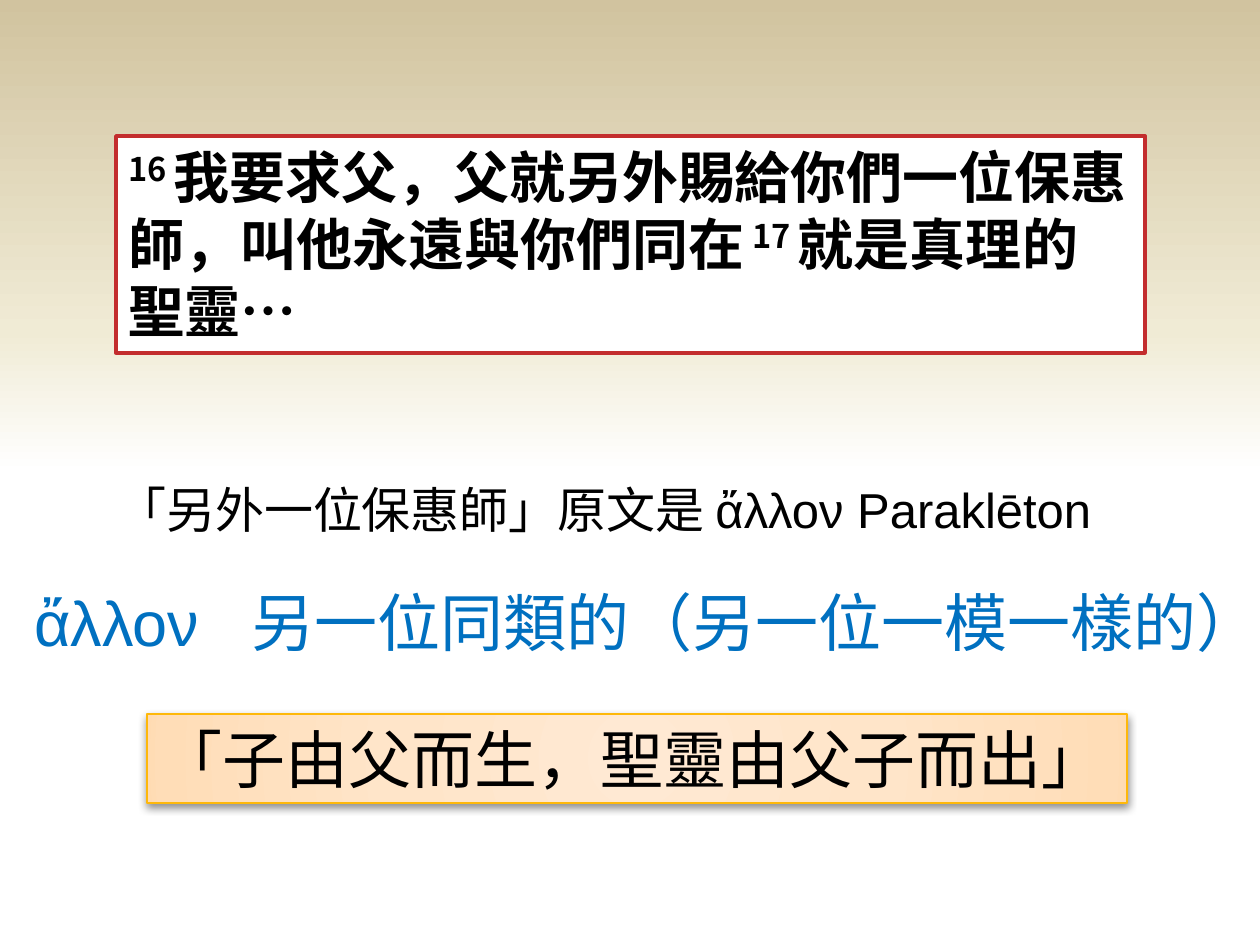
from pptx import Presentation
from pptx.dml.color import RGBColor
from pptx.enum.shapes import MSO_SHAPE as Preset
from pptx.enum.text import MSO_ANCHOR as Anchor, PP_ALIGN as Align
from pptx.oxml import parse_xml
from pptx.oxml.ns import nsdecls, qn
from pptx.util import Emu, Pt

COLORS = {"black": "000000", "white": "FFFFFF", "red": "C32D2E", "blue": "0070C0", "gold": "FEB80A"}
BACKDROP = [(50, "FFFFFF"), (50, "FFFFFF"), (65, "F0EBD5"), (100, "D1C39F")]
PEACH = [(0, "FFE9D3"), (50, "FFE5C9"), (97, "FFDDB7"), (100, "FFDBB2")]
LINEAR = '<a:lin ang="16200000" scaled="0"/>'
RADIAL = '<a:path path="circle"><a:fillToRect l="50000" t="50000" r="50000" b="50000"/></a:path>'

VERSE = [
    ("16\u00a0", 30),
    ("我要求父，父就另外賜給你們一位保惠師，叫他永遠與你們同在", 0),
    ("\u00a017\u00a0", 30),
    ("就是真理的聖靈…", 0),
]
ORIGINAL_WORDS = [("「另外一位保惠師」原文是 ἄλλον Paraklēton", 0)]
MEANING = [("ἄλλον   另一位同類的（另一位一模一樣的）", 0)]
CREED = [("「子由父而生，聖靈由父子而出」", 0)]


def px(length):
    return Emu(round(length * 914400 / 126))


def set_gradient(fill, element, stops, direction):
    fill.gradient()
    default = element.find(".//" + qn("a:gradFill"))
    marks = "".join(
        f'<a:gs pos="{pos * 1000}"><a:srgbClr val="{color}"/></a:gs>' for pos, color in stops
    )
    default.getparent().replace(default, parse_xml(
        f'<a:gradFill {nsdecls("a")} rotWithShape="1"><a:gsLst>{marks}</a:gsLst>{direction}</a:gradFill>'
    ))


def add_shadow(shape):
    shape._element.spPr.find(qn("a:effectLst")).append(parse_xml(
        f'<a:outerShdw {nsdecls("a")} blurRad="{Pt(5)}" dist="{Pt(2)}" dir="5400000" rotWithShape="0">'
        f'<a:srgbClr val="{COLORS["black"]}"><a:alpha val="43000"/></a:srgbClr></a:outerShdw>'
    ))


def write(shape, runs, size, font="Arial", color="black", bold=False, anchor=Anchor.TOP):
    frame = shape.text_frame
    frame.word_wrap = True
    frame.vertical_anchor = anchor
    paragraph = frame.paragraphs[0]
    paragraph.alignment = Align.LEFT
    for text, raised in runs:
        run = paragraph.add_run()
        run.text = text
        run.font.size = Pt(size)
        run.font.name = font
        run.font.bold = bold
        run.font.color.rgb = RGBColor.from_string(COLORS[color])
        properties = run.font._element
        if raised:
            properties.set("baseline", str(raised * 1000))
        if font != "Arial":
            properties.find(qn("a:latin")).addnext(
                parse_xml(f'<a:ea {nsdecls("a")} typeface="{font}"/>')
            )


def add_box(slide, place, line, width):
    box = slide.shapes.add_shape(Preset.RECTANGLE, *map(px, place))
    box.shadow.inherit = False
    box.line.color.rgb = RGBColor.from_string(COLORS[line])
    box.line.width = Pt(width)
    return box


def main():
    """Build the slide on the Greek word for another Paraclete."""
    deck = Presentation()
    deck.slide_width, deck.slide_height = px(1260), px(945)
    slide = deck.slides.add_slide(deck.slide_layouts[6])
    set_gradient(slide.background.fill, slide.element, BACKDROP, LINEAR)

    verse = add_box(slide, (116, 136, 1029, 217), "red", 2)
    verse.fill.solid()
    verse.fill.fore_color.rgb = RGBColor.from_string(COLORS["white"])
    write(verse, VERSE, 32, font="Noto Sans CJK SC", bold=True)

    original_words = slide.shapes.add_textbox(*map(px, (105, 473, 1071, 72)))
    write(original_words, ORIGINAL_WORDS, 28)
    meaning = slide.shapes.add_textbox(*map(px, (22, 577, 1262, 89)))
    write(meaning, MEANING, 36, color="blue")

    creed = add_box(slide, (147, 714, 980, 89), "gold", 0.75)
    set_gradient(creed.fill, creed._element, PEACH, RADIAL)
    add_shadow(creed)
    write(creed, CREED, 36)

    deck.save("out.pptx")


if __name__ == "__main__":
    main()
